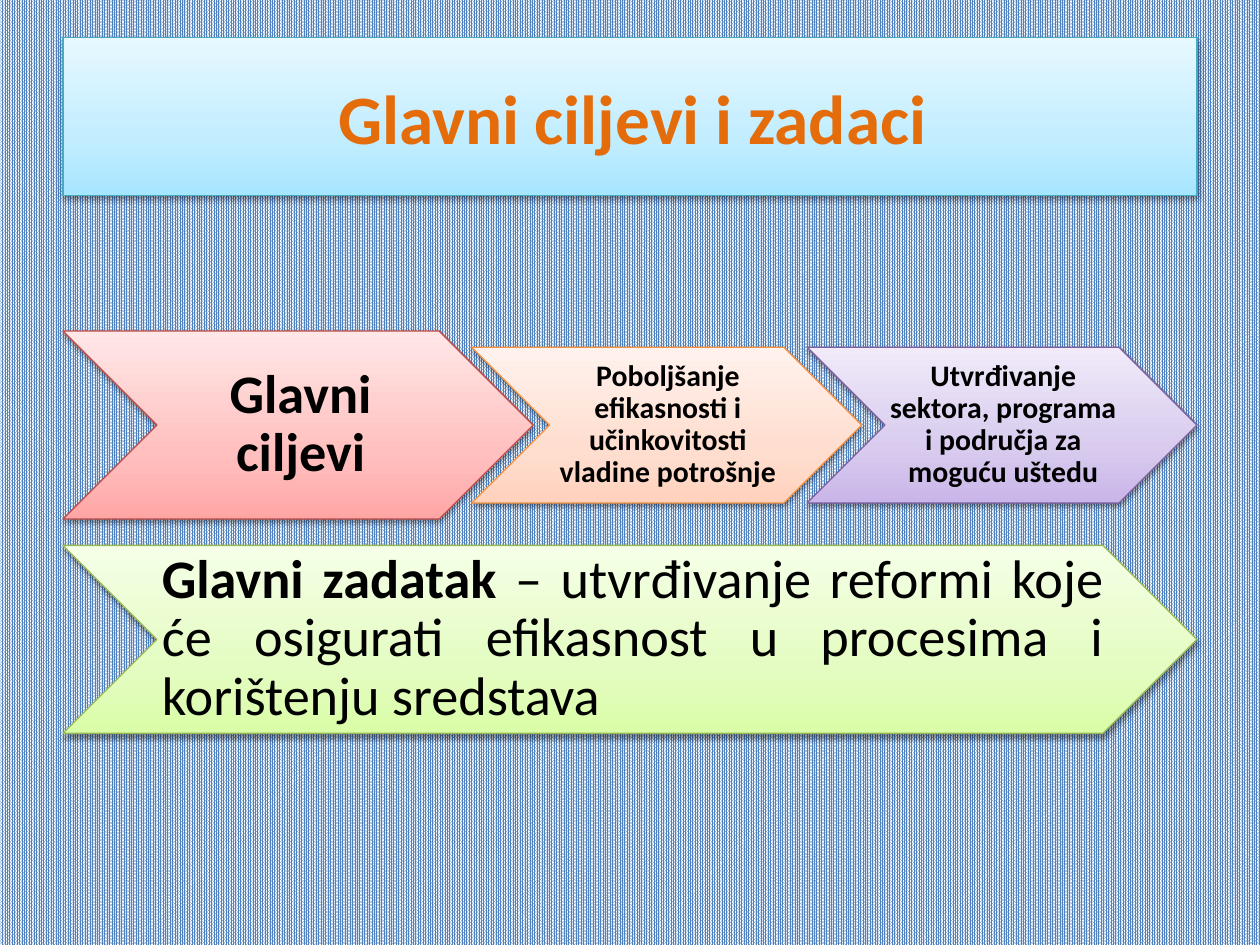
from copy import deepcopy

from lxml.etree import SubElement
from pptx import Presentation
from pptx.dml.color import RGBColor
from pptx.enum.dml import MSO_PATTERN
from pptx.enum.shapes import MSO_SHAPE
from pptx.enum.text import MSO_ANCHOR, PP_ALIGN
from pptx.oxml.ns import qn
from pptx.util import Cm, Pt

COLORS = {
    "pattern": "4F81BD", "white": "FFFFFF", "black": "000000", "title": "E46C0A",
}
THEMES = {
    "aqua": ("A7E6FF", "C1EDFF", "E7F8FF", "46AAC5"),
    "red": ("FFA6A5", "FFC0BF", "FFE7E7", "BF4C48"),
    "orange": ("FFD2BD", "FFDED0", "FFF2ED", "F69240"),
    "purple": ("C9B5E8", "D8CBEE", "F0EAF9", "7D60A0"),
    "green": ("DAFDA7", "E4FCC2", "F5FFE7", "98B955"),
}
STOPS = (0, 0.35, 1)

TITLE = "Glavni ciljevi i zadaci"
GOALS = [
    ("Glavni ciljevi", "red", "large"),
    ("Poboljšanje efikasnosti i učinkovitosti vladine potrošnje", "orange", "small"),
    ("Utvrđivanje sektora, programa i područja za moguću uštedu", "purple", "small"),
]
TASK = [
    ("Glavni zadatak", True),
    (" – utvrđivanje reformi koje će osigurati efikasnost u procesima"
     " i korištenju sredstava", False),
]

SIZES = {
    "large": {"width": 9.48, "height": 3.79, "overlap": 1.24, "font": 31, "inset": 0.1},
    "small": {"width": 7.86, "height": 3.14, "overlap": 1.1, "font": 17, "inset": 0.05},
}
LEFT, CONTENT_WIDTH = 1.27, 22.86
TITLE_TOP, TITLE_HEIGHT = 0.76, 4 - 0.82
GOALS_MIDDLE, TASK_MIDDLE = 8.57, 12.89


def rgb(name):
    return RGBColor.from_string(COLORS.get(name, name))


def add_panel(slide, kind, left, middle, width, height, theme):
    panel = slide.shapes.add_shape(
        kind, Cm(left), Cm(middle - height / 2), Cm(width), Cm(height))
    *shades, outline = THEMES[theme]
    panel.fill.gradient()
    panel.fill.gradient_angle = 90
    stop_list = panel._element.spPr.find(qn("a:gradFill")).find(qn("a:gsLst"))
    stop_list.insert(1, deepcopy(stop_list[0]))
    for stop, position, shade in zip(panel.fill.gradient_stops, STOPS, shades):
        stop.position = position
        stop.color.rgb = rgb(shade)
    panel.line.color.rgb = rgb(outline)
    panel.line.width = Pt(0.75)
    panel.shadow.inherit = False
    effects = panel._element.spPr.find(qn("a:effectLst"))
    shadow = SubElement(effects, qn("a:outerShdw"), blurRad="40000", dist="20000",
                        dir="5400000", rotWithShape="0")
    shade = SubElement(shadow, qn("a:srgbClr"), val=COLORS["black"])
    SubElement(shade, qn("a:alpha"), val="38000")
    return panel


def write(panel, runs, size, color, align, spacing=1.0, inset=0.1):
    frame = panel.text_frame
    frame.word_wrap = True
    frame.vertical_anchor = MSO_ANCHOR.MIDDLE
    frame.margin_left, frame.margin_right = Cm(inset), 0
    frame.margin_top = frame.margin_bottom = Cm(inset / 2)
    paragraph = frame.paragraphs[0]
    paragraph.alignment = align
    paragraph.line_spacing = spacing
    paragraph.font.name = "Calibri"
    paragraph.font.size = Pt(size)
    paragraph.font.color.rgb = rgb(color)
    for text, bold in runs:
        run = paragraph.add_run()
        run.text = text
        run.font.bold = bold
        run.font.size = Pt(size)
        run.font.name = "Calibri"
        run.font.color.rgb = rgb(color)


def main():
    deck = Presentation()
    deck.slide_width, deck.slide_height = Cm(25.4), Cm(19.05)
    slide = deck.slides.add_slide(deck.slide_layouts[6])
    backdrop = slide.background.fill
    backdrop.patterned()
    backdrop.pattern = MSO_PATTERN.PERCENT_90
    backdrop.fore_color.rgb = rgb("pattern")
    backdrop.back_color.rgb = rgb("white")

    title = add_panel(slide, MSO_SHAPE.RECTANGLE, LEFT, TITLE_TOP + TITLE_HEIGHT / 2,
                      CONTENT_WIDTH, TITLE_HEIGHT, "aqua")
    write(title, [(TITLE, True)], 39.6, "title", PP_ALIGN.CENTER)

    left = LEFT
    for text, theme, size in GOALS:
        spec = SIZES[size]
        goal = add_panel(slide, MSO_SHAPE.CHEVRON, left, GOALS_MIDDLE,
                         spec["width"], spec["height"], theme)
        write(goal, [(text, True)], spec["font"], "black", PP_ALIGN.CENTER,
              0.9, spec["inset"])
        left += spec["width"] - spec["overlap"]

    large = SIZES["large"]
    task = add_panel(slide, MSO_SHAPE.CHEVRON, LEFT, TASK_MIDDLE,
                     CONTENT_WIDTH, large["height"], "green")
    write(task, TASK, large["font"], "black", PP_ALIGN.JUSTIFY, 0.9, large["inset"])

    deck.save("out.pptx")


if __name__ == "__main__":
    main()
